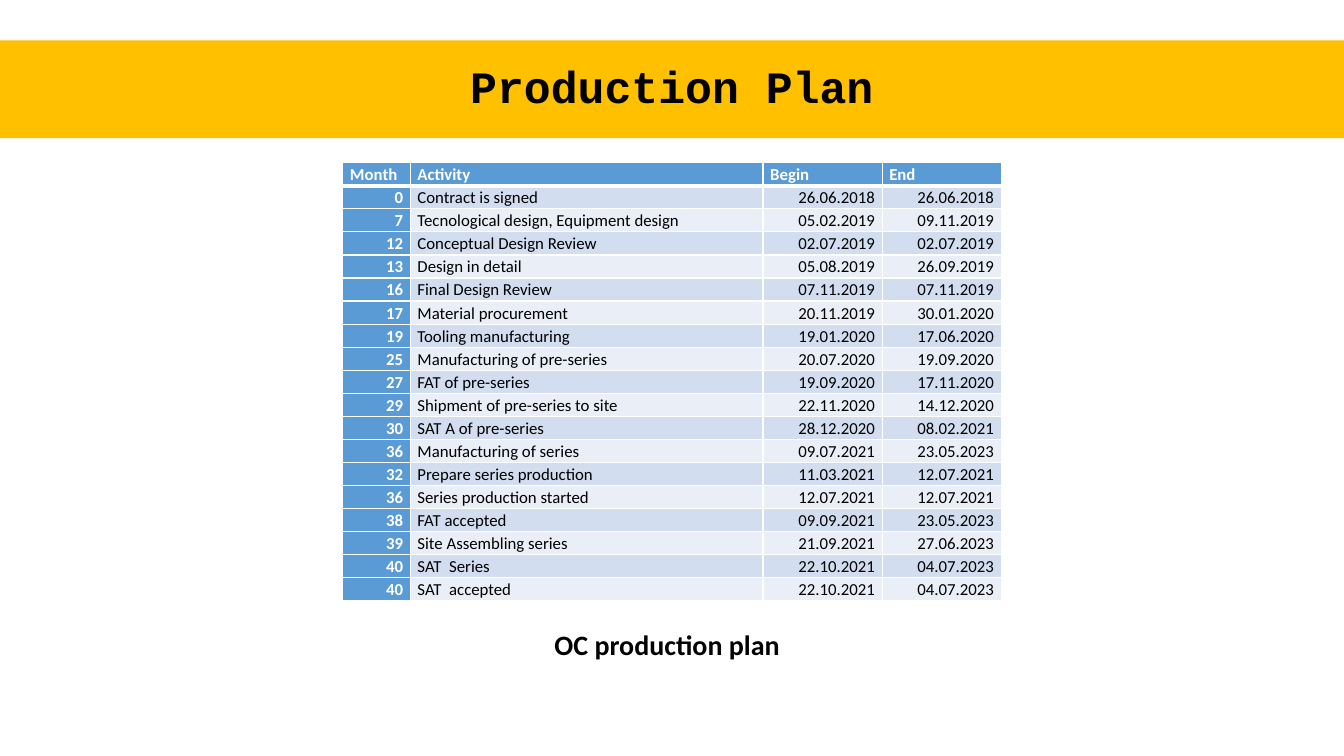
from dataclasses import dataclass

from pptx import Presentation
from pptx import util as u
from pptx.dml.color import RGBColor
from pptx.enum import text
from pptx.oxml.ns import qn
from lxml import etree

TITLE = "Production Plan"
CAPTION = "OC production plan"
HEADINGS = ("Month", "Activity", "Begin", "End")
MILESTONES = [
    ("0", "Contract is signed", "26.06.2018", "26.06.2018"),
    ("7", "Tecnological design, Equipment design", "05.02.2019", "09.11.2019"),
    ("12", "Conceptual Design Review", "02.07.2019", "02.07.2019"),
    ("13", "Design in detail", "05.08.2019", "26.09.2019"),
    ("16", "Final Design Review", "07.11.2019", "07.11.2019"),
    ("17", "Material procurement", "20.11.2019", "30.01.2020"),
    ("19", "Tooling manufacturing", "19.01.2020", "17.06.2020"),
    ("25", "Manufacturing of pre-series", "20.07.2020", "19.09.2020"),
    ("27", "FAT of pre-series", "19.09.2020", "17.11.2020"),
    ("29", "Shipment of pre-series to site", "22.11.2020", "14.12.2020"),
    ("30", "SAT A of pre-series", "28.12.2020", "08.02.2021"),
    ("36", "Manufacturing of series", "09.07.2021", "23.05.2023"),
    ("32", "Prepare series production", "11.03.2021", "12.07.2021"),
    ("36", "Series production started", "12.07.2021", "12.07.2021"),
    ("38", "FAT accepted", "09.09.2021", "23.05.2023"),
    ("39", "Site Assembling series", "21.09.2021", "27.06.2023"),
    ("40", "SAT  Series", "22.10.2021", "04.07.2023"),
    ("40", "SAT  accepted", "22.10.2021", "04.07.2023"),
]
COLUMN_WIDTHS = (1.7, 8.89, 3.0, 3.0)
PLAN_HEIGHT = 11.05


@dataclass(frozen=True)
class Theme:
    banner: str = "FFC000"
    header: str = "5B9BD5"
    bands: tuple = ("D2DEEF", "EAEFF7")
    ink: str = "000000"
    white: str = "FFFFFF"
    title_font: str = "Courier New"
    body_font: str = "Calibri"
    title_size: int = 32
    caption_size: int = 20
    cell_size: int = 12
    grid_line: int = 1
    header_line: int = 3


THEME = Theme()
ALIGN = text.PP_ALIGN
ANCHOR = text.MSO_ANCHOR


def write(frame, words, *, size, font=THEME.body_font, color=THEME.ink, bold=True,
          align=ALIGN.CENTER, spacing=1.0, before=0):
    paragraph = frame.paragraphs[0]
    paragraph.alignment = align
    paragraph.line_spacing = spacing
    paragraph.space_before = u.Pt(before)
    run = paragraph.add_run()
    run.text = words
    run.font.name = font
    run.font.size = u.Pt(size)
    run.font.bold = bold
    run.font.color.rgb = RGBColor.from_string(color)


def place(shape, left, top, width, height):
    shape.left, shape.top = u.Cm(left), u.Cm(top)
    shape.width, shape.height = u.Cm(width), u.Cm(height)


def paint(target, color):
    target.fill.solid()
    target.fill.fore_color.rgb = RGBColor.from_string(color)


def draw_borders(cell, row):
    """Add white cell borders, thicker below the header; call before filling."""
    properties = cell._tc.get_or_add_tcPr()
    thick_edge = {0: "lnB", 1: "lnT"}.get(row)
    for edge in ("lnL", "lnR", "lnT", "lnB"):
        points = THEME.header_line if edge == thick_edge else THEME.grid_line
        line = etree.SubElement(properties, qn(f"a:{edge}"), w=str(u.Pt(points)))
        solid = etree.SubElement(line, qn("a:solidFill"))
        etree.SubElement(solid, qn("a:srgbClr"), val=THEME.white)


def add_plan(slide):
    rows = [HEADINGS, *MILESTONES]
    plan = slide.shapes.add_table(
        len(rows), len(HEADINGS), u.Cm(8.64), u.Cm(4.1),
        u.Cm(sum(COLUMN_WIDTHS)), u.Cm(PLAN_HEIGHT)).table
    for column, width in zip(plan.columns, COLUMN_WIDTHS):
        column.width = u.Cm(width)
    for r, values in enumerate(rows):
        plan.rows[r].height = u.Cm(PLAN_HEIGHT / len(rows))
        for c, value in enumerate(values):
            cell = plan.cell(r, c)
            heading = r == 0 or c == 0
            left_aligned = r == 0 or c == 1
            draw_borders(cell, r)
            paint(cell, THEME.header if heading else THEME.bands[(r - 1) % 2])
            cell.vertical_anchor = ANCHOR.MIDDLE
            cell.margin_left = cell.margin_right = u.Cm(0.18)
            cell.margin_top = cell.margin_bottom = 0
            write(cell.text_frame, value, size=THEME.cell_size, bold=heading,
                  color=THEME.white if heading else THEME.ink, spacing=1.07,
                  align=ALIGN.LEFT if left_aligned else ALIGN.RIGHT)


def main():
    deck = Presentation()
    deck.slide_width, deck.slide_height = u.Cm(33.87), u.Cm(19.05)
    slide = deck.slides.add_slide(deck.slide_layouts[5])

    banner = slide.shapes.title
    place(banner, 0, 1.02, 33.87, 2.46)
    paint(banner, THEME.banner)
    banner.text_frame.auto_size = text.MSO_AUTO_SIZE.NONE
    banner.text_frame.vertical_anchor = ANCHOR.MIDDLE
    write(banner.text_frame, TITLE, size=THEME.title_size,
          font=THEME.title_font, spacing=0.9)

    caption = slide.shapes.add_textbox(0, 0, 0, 0)
    place(caption, 9.65, 15.8, 14.33, 0.97)
    caption.text_frame.word_wrap = True
    caption.text_frame.vertical_anchor = ANCHOR.BOTTOM
    write(caption.text_frame, CAPTION, size=THEME.caption_size,
          spacing=0.8, before=10)

    add_plan(slide)
    deck.save("out.pptx")


if __name__ == "__main__":
    main()
